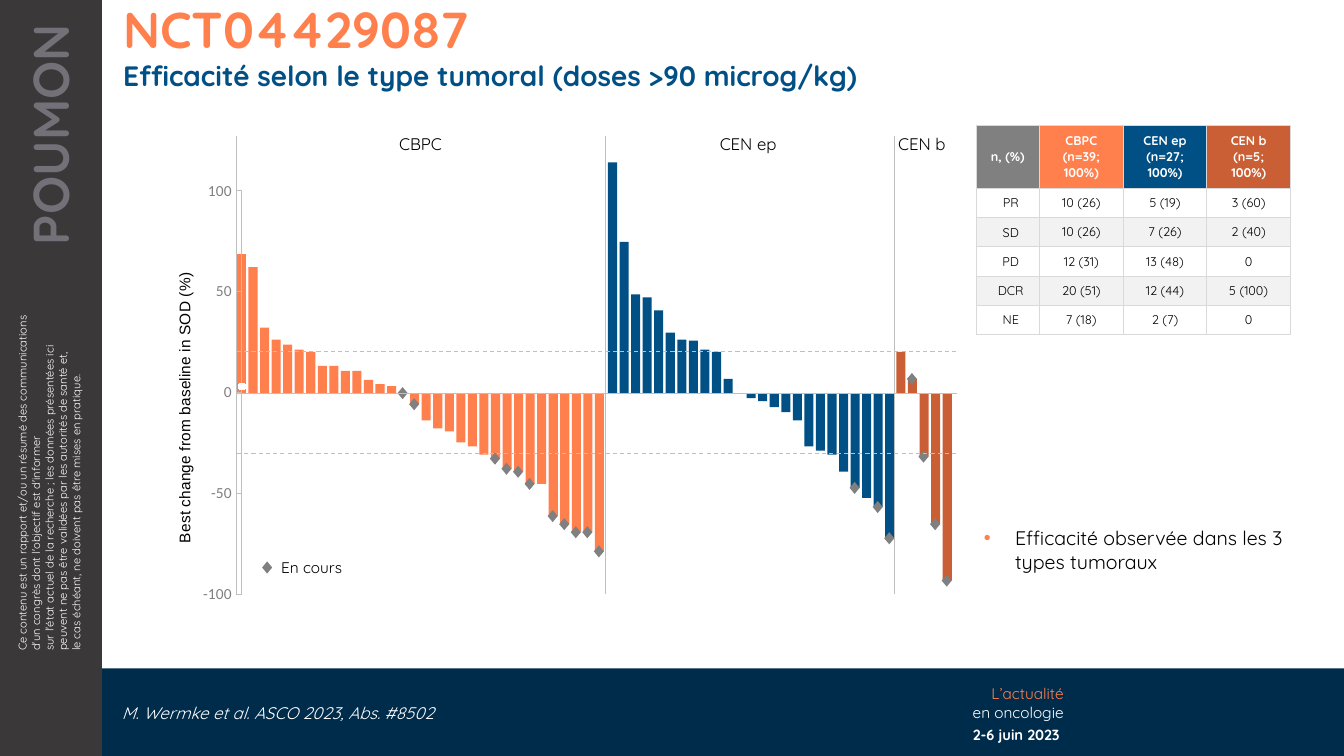
from dataclasses import dataclass

from pptx import Presentation
from pptx.chart.data import XyChartData
from pptx.dml.color import RGBColor
from pptx.enum import chart as chart_enum, dml, shapes, text
from pptx.oxml import parse_xml
from pptx.oxml.ns import nsdecls
from pptx.util import Inches, Pt

ORANGE, BLUE, RUST = "FF7F4D", "005086", "CA5E34"
GREY, RULE, WHITE, BLACK = "808080", "BFBFBF", "FFFFFF", "000000"
FONT = "Quicksand"
LEFT, CENTER, RIGHT = text.PP_ALIGN.LEFT, text.PP_ALIGN.CENTER, text.PP_ALIGN.RIGHT
BASELINE, BAR_WIDTH = 3.9, 0.09
MARK_WIDTH, MARK_HEIGHT = 0.1, 0.12


@dataclass
class Label:
    text: str
    at: tuple[float, float, float, float]
    size: float
    color: str = WHITE
    bold: bool = False
    italic: bool = False
    align: text.PP_ALIGN = LEFT
    rotation: int = 0
    margins: tuple[float, float] = (0.1, 0.1)
    spacing: float = 1.0
    wrap: bool = True


@dataclass
class TumourGroup:
    color: str
    first: float
    last: float
    changes: list[float]
    ongoing: list[int]


@dataclass
class Rule:
    start: tuple[float, float]
    end: tuple[float, float]
    dashed: bool = False


def rgb(color: str) -> RGBColor:
    return RGBColor.from_string(color)


def style(font, size: float, color: str, bold=False, italic=False, name: str = FONT) -> None:
    font.name, font.size, font.bold, font.italic = name, Pt(size), bold, italic
    font.color.rgb = rgb(color)


def fill_label(shape, label: Label):
    shape.left, shape.top, shape.width, shape.height = map(Inches, label.at)
    shape.rotation = label.rotation
    frame = shape.text_frame
    frame.text = label.text
    frame.word_wrap = label.wrap
    frame.auto_size = text.MSO_AUTO_SIZE.NONE
    frame.vertical_anchor = text.MSO_ANCHOR.TOP
    frame.margin_left, frame.margin_right = map(Inches, label.margins)
    frame.margin_top = frame.margin_bottom = Inches(0.05)
    paragraph = frame.paragraphs[0]
    paragraph.alignment, paragraph.line_spacing = label.align, label.spacing
    paragraph.space_before = Pt(0)
    for run in paragraph.runs:
        style(run.font, label.size, label.color, label.bold, label.italic)
    return paragraph


def add_label(slide, label: Label):
    return fill_label(slide.shapes.add_textbox(*map(Inches, label.at)), label)


def add_block(slide, at, color: str, kind=shapes.MSO_SHAPE.RECTANGLE) -> None:
    shape = slide.shapes.add_shape(kind, *map(Inches, at))
    shape.shadow.inherit = False
    shape.fill.solid()
    shape.fill.fore_color.rgb = rgb(color)
    shape.line.fill.background()


def add_mark(slide, left: float, middle: float) -> None:
    at = (left, middle - MARK_HEIGHT / 2, MARK_WIDTH, MARK_HEIGHT)
    add_block(slide, at, GREY, shapes.MSO_SHAPE.DIAMOND)


def add_group(slide, group: TumourGroup) -> None:
    step = (group.last - group.first) / (len(group.changes) - 1)
    for index, change in enumerate(group.changes):
        if change:
            at = (group.first + index * step, BASELINE - max(change, 0), BAR_WIDTH, abs(change))
            add_block(slide, at, group.color)
    for index in group.ongoing:
        add_mark(slide, group.first + index * step - 0.01, BASELINE - group.changes[index])


def add_rule(slide, rule: Rule) -> None:
    line = slide.shapes.add_connector(shapes.MSO_CONNECTOR.STRAIGHT, *map(Inches, rule.start + rule.end))
    line.line.color.rgb, line.line.width = rgb(RULE), Pt(0.75)
    if rule.dashed:
        line.line.dash_style = dml.MSO_LINE.DASH
    line._element.spPr.append(parse_xml(f"<a:effectLst {nsdecls('a')}/>"))


def place(element, index: int, **values: float) -> None:
    """Give a chart part a manual layout."""
    for layout in element.xpath("c:layout"):
        element.remove(layout)
    modes = {"x": "edge", "y": "edge"}
    parts = '<c:layoutTarget val="inner"/>' if "w" in values else ""
    parts += "".join(f'<c:{key}Mode val="{mode}"/>' for key, mode in modes.items())
    parts += "".join(f'<c:{key} val="{value}"/>' for key, value in values.items())
    element.insert(index, parse_xml(
        f"<c:layout {nsdecls('c')}><c:manualLayout>{parts}</c:manualLayout></c:layout>"))


def add_scale(slide) -> None:
    data = XyChartData()
    data.add_series("Series 1").add_data_point(0.7, 3)
    at = map(Inches, (1.54, 1.72, 1.75, 4.35))
    chart = slide.shapes.add_chart(chart_enum.XL_CHART_TYPE.XY_SCATTER, *at, data).chart
    chart.has_legend = chart.has_title = False
    style(chart.font, 10, BLACK, name="Calibri")
    horizontal, vertical = chart.category_axis, chart.value_axis
    horizontal.visible = False
    horizontal.minimum_scale, horizontal.maximum_scale, horizontal.major_unit = 0, 180, 10
    vertical.minimum_scale, vertical.maximum_scale, vertical.major_unit = -100, 100, 50
    horizontal.has_major_gridlines = vertical.has_major_gridlines = False
    vertical.major_tick_mark = chart_enum.XL_TICK_MARK.OUTSIDE
    vertical.format.line.color.rgb, vertical.format.line.width = rgb(RULE), Pt(0.75)
    style(vertical.tick_labels.font, 11, GREY, name="Calibri")
    title = vertical.axis_title
    title.text_frame.text = "Best change from baseline in SOD (%)"
    style(title.text_frame.paragraphs[0].runs[0].font, 11, BLACK, name="Arial")
    place(title._element, 1, x=0.09, y=0.22)
    place(chart._chartSpace.chart.plotArea, 0, x=0.49, y=0.04, w=0.45, h=0.92)
    chart._chartSpace.chart.addnext(parse_xml(
        f"<c:spPr {nsdecls('c', 'a')}><a:noFill/><a:ln><a:noFill/></a:ln></c:spPr>"))
    series = chart.plots[0].series[0]
    series.format.line.fill.background()
    series.marker.style, series.marker.size = chart_enum.XL_MARKER_STYLE.CIRCLE, 5
    series.marker.format.fill.background()
    series.marker.format.line.fill.background()


def format_cell(cell, content: str, row: int, column: int) -> None:
    header_fills = (GREY, ORANGE, BLUE, RUST)
    cell.text = content
    cell.vertical_anchor = text.MSO_ANCHOR.MIDDLE
    sides = (0.1, 0.1) if row == 0 else (0.09, 0.03) if column == 0 else (0, 0)
    cell.margin_left, cell.margin_right = map(Inches, sides)
    cell.margin_top = cell.margin_bottom = Inches(0.02 if row and column else 0.05)
    for paragraph in cell.text_frame.paragraphs:
        paragraph.alignment = CENTER
        paragraph.line_spacing = 0.95 if row and column else 1.0
        style(paragraph.runs[0].font, 9, BLACK if row else WHITE, bold=row == 0)
    properties = cell._tc.get_or_add_tcPr()
    for side in "LRTB":
        properties.append(parse_xml(
            f'<a:ln{side} {nsdecls("a")} w="9525"><a:solidFill><a:srgbClr val="D9D9D9"/>'
            f"</a:solidFill></a:ln{side}>"))
    cell.fill.solid()
    cell.fill.fore_color.rgb = rgb(header_fills[column] if row == 0 else WHITE if row % 2 else "F2F2F2")


def add_responses(slide) -> None:
    rows = [("n, (%)", "CBPC\n(n=39;\n100%)", "CEN ep\n(n=27;\n100%)", "CEN b\n(n=5;\n100%)"),
            ("PR", "10 (26)", "5 (19)", "3 (60)"), ("SD", "10 (26)", "7 (26)", "2 (40)"),
            ("PD", "12 (31)", "13 (48)", "0"), ("DCR", "20 (51)", "12 (44)", "5 (100)"),
            ("NE", "7 (18)", "2 (7)", "0")]
    at = map(Inches, (9.68, 1.24, 3.11, 2.06))
    table = slide.shapes.add_table(len(rows), len(rows[0]), *at).table
    for index, column in enumerate(table.columns):
        column.width = Inches(0.83 if index else 0.63)
    for index, row in enumerate(rows):
        table.rows[index].height = Inches(0.29 if index else 0.63)
        for column, content in enumerate(row):
            format_cell(table.cell(index, column), content, index, column)


LABELS = [
    Label("Ce contenu est un rapport et/ou un résumé des communications d'un congrès dont l'objectif est "
          "d'informer\vsur l'état actuel de la recherche ; les données présentées ici peuvent ne pas être "
          "validées par les autorités de santé et,\vle cas échéant, ne doivent pas être mises en pratique.",
          (-1.31, 4.37, 3.6, 0.77), 8, rotation=270),
    Label("POUMON", (-1.04, 1.18, 3.07, 0.71), 36, "737078", True, align=RIGHT, rotation=270, margins=(0.1, 0.24)),
    Label("2-6 juin 2023", (9.01, 7.17, 1.54, 0.27), 10.5, bold=True, align=RIGHT, margins=(0.1, 0.04), spacing=0.9),
    Label("Efficacité selon le type tumoral (doses >90 microg/kg)", (1.02, 0.57, 12.31, 0.37), 20, BLUE, True,
          margins=(0.2, 0.1), spacing=0.9),
    Label("M. Wermke et al. ASCO 2023, Abs. #8502", (1.11, 6.94, 5.64, 0.27), 12, italic=True, spacing=0.9),
    Label("CBPC", (3.86, 1.28, 0.67, 0.3), 12, BLACK, wrap=False),
    Label("CEN ep", (7.04, 1.28, 0.82, 0.3), 12, BLACK, wrap=False),
    Label("CEN b", (8.81, 1.28, 0.71, 0.3), 12, BLACK, wrap=False),
    Label("En cours", (2.69, 5.49, 0.82, 0.29), 11, BLACK, wrap=False),
]
# Signed bar heights in inches
GROUPS = [
    TumourGroup(ORANGE, 2.35, 5.9, [
        1.38, 1.25, 0.65, 0.53, 0.48, 0.43, 0.41, 0.27, 0.27, 0.22, 0.22, 0.13, 0.09, 0.07, 0, -0.11,
        -0.27, -0.35, -0.38, -0.49, -0.53, -0.61, -0.65, -0.75, -0.78, -0.9, -0.9, -1.22, -1.3, -1.38,
        -1.38, -1.57], [14, 15, 22, 23, 24, 25, 27, 28, 29, 30, 31]),
    TumourGroup(BLUE, 6.03, 8.78, [
        2.29, 1.5, 0.98, 0.95, 0.82, 0.6, 0.53, 0.52, 0.43, 0.41, 0.14, 0, -0.05, -0.08, -0.14, -0.19,
        -0.27, -0.53, -0.57, -0.61, -0.78, -0.94, -1.04, -1.13, -1.44], [21, 23, 24]),
    TumourGroup(RUST, 8.89, 9.35, [0.41, 0.14, -0.63, -1.3, -1.86], [1, 2, 3, 4]),
]
RULES = [Rule((2.35, y), (9.49, y), y != BASELINE) for y in (BASELINE, 4.5, 3.49)]
RULES += [Rule((x, 1.35), (x, 5.89)) for x in (6.01, 8.87, 2.35)]


def main() -> None:
    presentation = Presentation()
    presentation.slide_width, presentation.slide_height = Inches(13.33), Inches(7.5)
    slide = presentation.slides.add_slide(presentation.slide_layouts[5])

    # Frame and texts
    add_block(slide, (1.01, 6.63, 12.32, 0.87), "002C4C")
    add_block(slide, (0, 0, 1.01, 7.5), "3A3839")
    fill_label(slide.shapes.title, Label("NCT04429087", (1.02, 0, 12.31, 0.57), 36, ORANGE, True,
                                         margins=(0.2, 0.1), spacing=0.9))
    for label in LABELS:
        add_label(slide, label)
    series_name = add_label(slide, Label("L’actualité\ven oncologie", (9.01, 6.74, 1.64, 0.47), 11, align=RIGHT))
    series_name.runs[0].font.color.rgb = rgb(ORANGE)

    # Bulleted conclusion
    conclusion = add_label(slide, Label("Efficacité observée dans les 3 types tumoraux",
                                        (9.66, 5.17, 3.2, 0.57), 14, BLACK))
    properties = conclusion._p.get_or_add_pPr()
    properties.set("marL", str(Inches(0.31)))
    properties.set("indent", str(Inches(-0.31)))
    for bullet in (f'<a:buClr {nsdecls("a")}><a:srgbClr val="{ORANGE}"/></a:buClr>',
                   f'<a:buFont {nsdecls("a")} typeface="Arial"/>', f'<a:buChar {nsdecls("a")} char="•"/>'):
        properties.append(parse_xml(bullet))

    # Waterfall plot
    for group in GROUPS:
        add_group(slide, group)
    add_mark(slide, 2.6, 5.63)
    add_scale(slide)
    for rule in RULES:
        add_rule(slide, rule)

    add_responses(slide)
    presentation.save("out.pptx")


if __name__ == "__main__":
    main()
